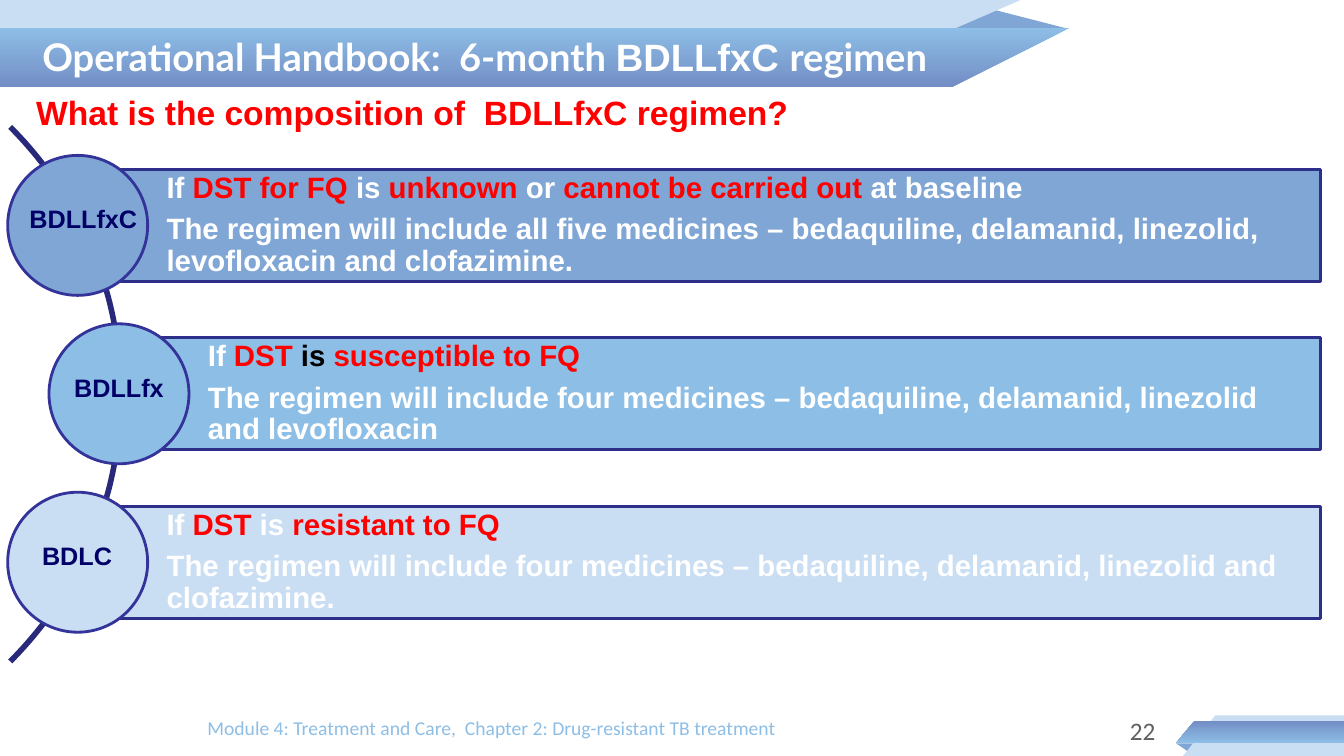
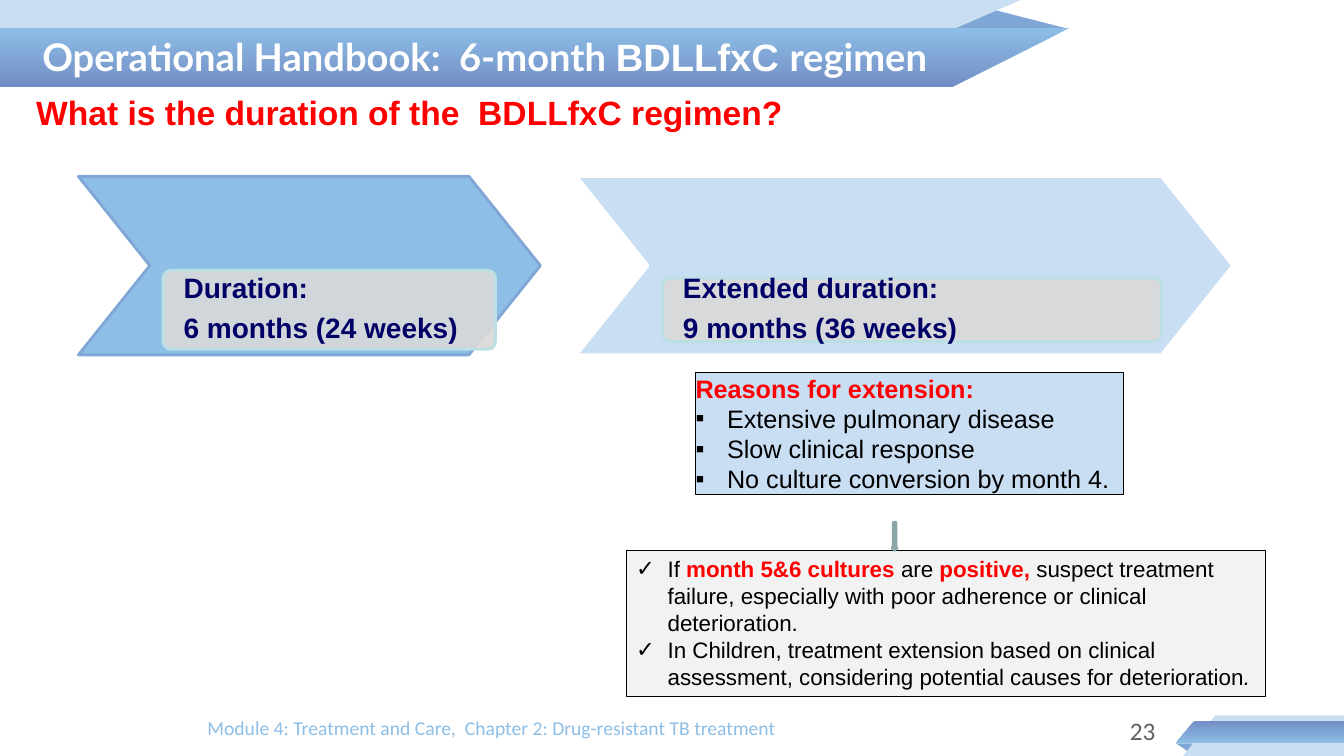
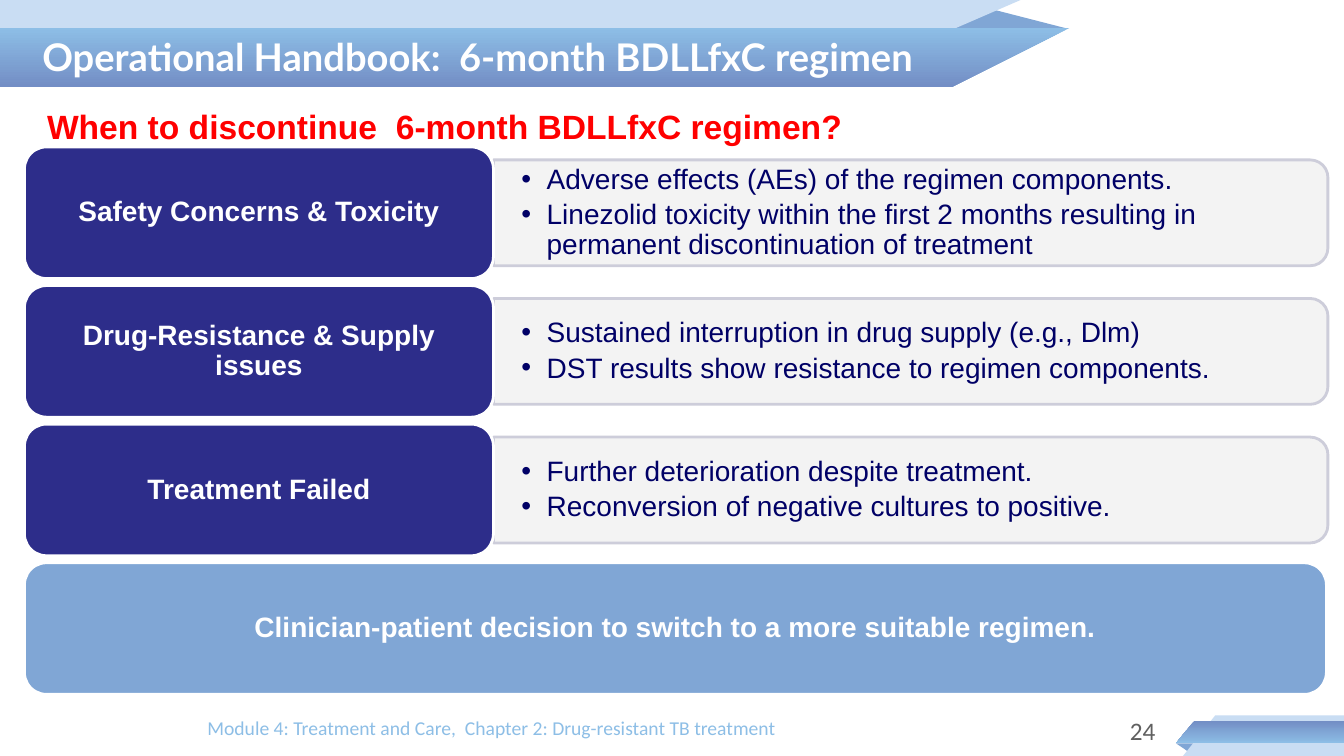
from math import cos, radians, sin

from lxml.etree import SubElement
from pptx import Presentation
from pptx.dml.color import RGBColor
from pptx.enum.shapes import MSO_SHAPE
from pptx.enum.text import MSO_ANCHOR, MSO_AUTO_SIZE, PP_ALIGN
from pptx.oxml.ns import qn
from pptx.util import Pt

WHITE, BLACK, RED, NAVY = "FFFFFF", "000000", "FF0000", "000066"
STEEL, SKY, PALE, DEEP = "80A6D5", "8DBEE6", "C9DDF3", "738EC5"
INDIGO, SILVER, MIST, AQUA = "2D2D8A", "D9D9D9", "F2F2F2", "BBE0E3"
FOOTER = "Module 4: Treatment and Care,  Chapter 2: Drug-resistant TB treatment"


def color(value):
    return RGBColor.from_string(value)


def styled(text, **form):
    return text, form


def red(text, **form):
    return styled(text, ink=RED, **form)


def unpack(item):
    return item if isinstance(item, tuple) else (item, {})


class Handbook:
    base = dict(size=20, font="Arial", ink=BLACK, bold=False, italic=False,
                align=PP_ALIGN.LEFT, spacing=1.0, after=0, bullet=None, indent=22.5)

    def __init__(self):
        self.deck = Presentation()
        self.deck.slide_width, self.deck.slide_height = Pt(960), Pt(540)
        self.slide = None

    def page(self, title, number):
        self.slide = self.deck.slides.add_slide(self.deck.slide_layouts[5])
        self.outline([(679, 20.6), (710, 7), (763, 20.6)], fill=STEEL)
        self.outline([(0, 0), (729, 0), (586, 62), (0, 62)], fill=PALE)
        self.outline([(0, 20), (764, 20), (680, 62), (0, 62)], fill=(SKY, DEEP))
        self.outline([(840, 531), (853, 531), (849, 537)], fill=STEEL)
        self.outline([(868, 511), (960, 511), (960, 540), (845, 540)], fill=PALE)
        self.outline([(853, 515), (960, 515), (960, 531), (840, 531)], fill=(DEEP, SKY))
        self.title(title)
        self.text([FOOTER], 141, 507.6, 577, 28.8, size=14, font="Calibri", ink=SKY)
        self.text([str(number)], 729.5, 507.6, 103, 28.8, size=18, font="Calibri",
                  ink="606060", align=PP_ALIGN.RIGHT)

    def title(self, pieces):
        box = self.slide.shapes.title
        box.left, box.top, box.width, box.height = Pt(23), Pt(8), Pt(660), Pt(64)
        box.element.getparent().append(box.element)
        self.put_text(box, [pieces], anchor=MSO_ANCHOR.MIDDLE, size=27.2, font="Lato",
                      ink=WHITE, bold=True)

    def heading(self, text, left=18.7, top=62):
        self.text([text], left, top, 860, 36, size=24, ink=RED, bold=True)

    def paint(self, shape, fill=None, line=None, weight=2.0, opacity=None):
        shape.shadow.inherit = False
        if isinstance(fill, tuple):
            shape.fill.gradient()
            shape.fill.gradient_angle = 270
            for stop, shade in zip(shape.fill.gradient_stops, fill):
                stop.color.rgb = color(shade)
        elif fill:
            shape.fill.solid()
            shape.fill.fore_color.rgb = color(fill)
        else:
            shape.fill.background()
        if opacity:
            shade = shape.element.spPr.find(qn("a:solidFill"))[0]
            SubElement(shade, qn("a:alpha"), val=str(opacity * 1000))
        if line:
            shape.line.color.rgb = color(line)
            shape.line.width = Pt(weight)
        else:
            shape.line.fill.background()
        return shape

    def outline(self, points, closed=True, **look):
        start, *rest = [(Pt(x), Pt(y)) for x, y in points]
        builder = self.slide.shapes.build_freeform(*start)
        builder.add_line_segments(rest, close=closed)
        return self.paint(builder.convert_to_shape(), **look)

    def shape(self, kind, left, top, width, height, adjust=None, **look):
        shape = self.slide.shapes.add_shape(kind, Pt(left), Pt(top), Pt(width), Pt(height))
        if adjust is not None:
            shape.adjustments[0] = adjust
        return self.paint(shape, **look)

    def text(self, paragraphs, left, top, width, height, **form):
        box = self.slide.shapes.add_textbox(Pt(left), Pt(top), Pt(width), Pt(height))
        self.put_text(box, paragraphs, **form)

    def put_text(self, box, paragraphs, anchor=MSO_ANCHOR.TOP, insets=(7.2, 3.6, 7.2, 3.6),
                 **form):
        frame = box.text_frame
        frame.word_wrap, frame.auto_size = True, MSO_AUTO_SIZE.NONE
        frame.vertical_anchor = anchor
        (frame.margin_left, frame.margin_top,
         frame.margin_right, frame.margin_bottom) = map(Pt, insets)
        for index, item in enumerate(paragraphs):
            pieces, extra = unpack(item)
            style = {**self.base, **form, **extra}
            para = frame.add_paragraph() if index else frame.paragraphs[0]
            para.alignment, para.line_spacing = style["align"], style["spacing"]
            para.space_before, para.space_after = Pt(0), Pt(style["after"])
            if style["bullet"]:
                self.bullet(para, style["bullet"], style["indent"])
            for piece in [pieces] if isinstance(pieces, str) else pieces:
                words, change = unpack(piece)
                self.span(para, words, {**style, **change})

    def bullet(self, para, mark, indent):
        properties = para._p.get_or_add_pPr()
        properties.set("marL", str(Pt(indent)))
        properties.set("indent", str(-Pt(indent)))
        SubElement(properties, qn("a:buFont"), typeface="Arial")
        SubElement(properties, qn("a:buChar"), char=mark)

    def span(self, para, words, style):
        span = para.add_run()
        span.text = words
        span.font.name, span.font.size = style["font"], Pt(style["size"])
        span.font.bold, span.font.italic = style["bold"], style["italic"]
        span.font.color.rgb = color(style["ink"])


def composition(book, title):
    book.page(title, 22)
    book.heading("What is the composition of  BDLLfxC regimen?")
    arc = [(-183.6 + 270 * cos(radians(angle)), 281.6 + 270 * sin(radians(angle)))
           for angle in range(-45, 46)]
    book.outline(arc, closed=False, line="29297B", weight=4)
    lead = "The regimen will include "
    regimens = [
        ("BDLLfxC", 11.5, 55.5, STEEL,
         ["If ", red("DST for FQ "), "is ", red("unknown"), " or ",
          red("cannot be carried out "), "at baseline"],
         "all five medicines – bedaquiline, delamanid, linezolid, levofloxacin and clofazimine."),
        ("BDLLfx", 37, 85, SKY,
         ["If ", red("DST "), styled("is", ink=BLACK), red(" susceptible to FQ")],
         "four medicines – bedaquiline, delamanid, linezolid and levofloxacin"),
        ("BDLC", 7, 55.5, PALE,
         ["If ", red("DST "), "is ", red("resistant to FQ")],
         "four medicines – bedaquiline, delamanid, linezolid and clofazimine."),
    ]
    for row, (label, label_left, left, fill, condition, medicines) in enumerate(regimens):
        top = 121 + 120.3 * row
        bar = book.shape(MSO_SHAPE.RECTANGLE, left, top, 943 - left, 80, fill=fill, line="2E2E8B")
        book.put_text(bar, [condition, lead + medicines], anchor=MSO_ANCHOR.MIDDLE,
                      insets=(63.5, 4, 4, 4), size=21, ink=WHITE, bold=True, spacing=0.9, after=7)
        book.shape(MSO_SHAPE.OVAL, left - 50, top - 10, 100, 100, fill=fill, line="333399")
        book.text([label], label_left, top + 21, 96, 28.8, size=18, ink=NAVY, bold=True,
                  align=PP_ALIGN.CENTER)


def duration(book, title):
    book.page(title, 23)
    book.heading("What is the duration of the  BDLLfxC regimen?")
    reasons = book.shape(MSO_SHAPE.RECTANGLE, 496.8, 266, 305.5, 87, fill=PALE, line=BLACK,
                         weight=0.75)
    book.put_text(reasons, [red("Reasons for extension:", bold=True, bullet=None),
                            "Extensive pulmonary disease", "Slow clinical response",
                            "No culture conversion by month 4."],
                  anchor=MSO_ANCHOR.MIDDLE, insets=(0, 0, 0, 0), size=18, bullet="▪")
    phases = [
        ((56, 126, 330, 127.5), SKY, STEEL, (116.5, 193, 237.5, 56.5),
         ["Duration:", "6 months (24 weeks)"]),
        ((412, 126, 468.5, 127.5), PALE, WHITE, (473.5, 198.5, 356, 45.5),
         ["Extended duration:", "9 months (36 weeks)"]),
    ]
    for arrow, fill, line, plate, words in phases:
        book.shape(MSO_SHAPE.CHEVRON, *arrow, adjust=0.4, fill=fill, line=line)
        card = book.shape(MSO_SHAPE.ROUNDED_RECTANGLE, *plate, adjust=0.1, fill=SILVER,
                          line=AQUA, opacity=90)
        book.put_text(card, words, anchor=MSO_ANCHOR.MIDDLE, insets=(13, 0, 13, 0),
                      ink=NAVY, bold=True, spacing=0.9, after=7)
    advice = book.shape(MSO_SHAPE.RECTANGLE, 447.3, 393.3, 456.5, 104, fill=MIST, line=BLACK,
                        weight=0.75)
    book.put_text(advice, [
        ["If ", red("month 5&6 cultures ", bold=True), "are", red(" positive, ", bold=True),
         "suspect treatment failure, especially with poor adherence or clinical deterioration."],
        ["In Children, treatment extension based on clinical assessment, "
         "considering potential causes for deterioration", styled(".", italic=True)],
    ], size=16, bullet="✓")
    book.shape(MSO_SHAPE.DOWN_ARROW, 637.2, 373, 3.6, 20, fill=AQUA, line="8AA6A8")


def discontinuation(book, title):
    book.page(title, 24)
    tile = dict(anchor=MSO_ANCHOR.MIDDLE, insets=(10, 7, 10, 7), ink=WHITE, bold=True,
                align=PP_ALIGN.CENTER, spacing=0.9)
    causes = [
        ("Safety Concerns & Toxicity",
         ["Adverse effects (AEs) of the regimen components.",
          "Linezolid toxicity within the first 2 months resulting in "
          "permanent discontinuation of treatment"]),
        ("Drug-Resistance & Supply issues",
         ["Sustained interruption in drug supply (e.g., Dlm)",
          "DST results show resistance to regimen components."]),
        ("Treatment Failed",
         ["Further deterioration despite treatment.",
          "Reconversion of negative cultures to positive."]),
    ]
    for row, (cause, details) in enumerate(causes):
        top = 105 + 99 * row
        panel = book.shape(MSO_SHAPE.ROUND_2_SAME_RECTANGLE, 612.7, top - 251, 75.6, 596,
                           fill=MIST, line="CDCDDA", opacity=90)
        panel.rotation = 90
        book.text(details, 353, top + 13, 592.5, 68, anchor=MSO_ANCHOR.MIDDLE,
                  insets=(19.5, 0, 19.5, 0), ink=NAVY, spacing=0.9, after=3.5,
                  bullet="•", indent=18)
        label = book.shape(MSO_SHAPE.ROUNDED_RECTANGLE, 17.5, top, 335, 94, fill=INDIGO, line=WHITE)
        book.put_text(label, [cause], **tile)
    decision = book.shape(MSO_SHAPE.ROUNDED_RECTANGLE, 17.5, 402, 930, 94, fill=STEEL, line=WHITE)
    book.put_text(decision, ["Clinician-patient decision to switch to a more suitable regimen."],
                  **tile)
    book.heading("When to discontinue  6-month BDLLfxC regimen?", left=26.5, top=72)


def main():
    book = Handbook()
    opening = "Operational Handbook:  6-month "
    mixed = [opening, styled("BDLLfxC ", font="Arial"), "regimen"]
    composition(book, mixed)
    duration(book, mixed)
    discontinuation(book, opening + "BDLLfxC regimen")
    book.deck.save("out.pptx")


if __name__ == "__main__":
    main()
